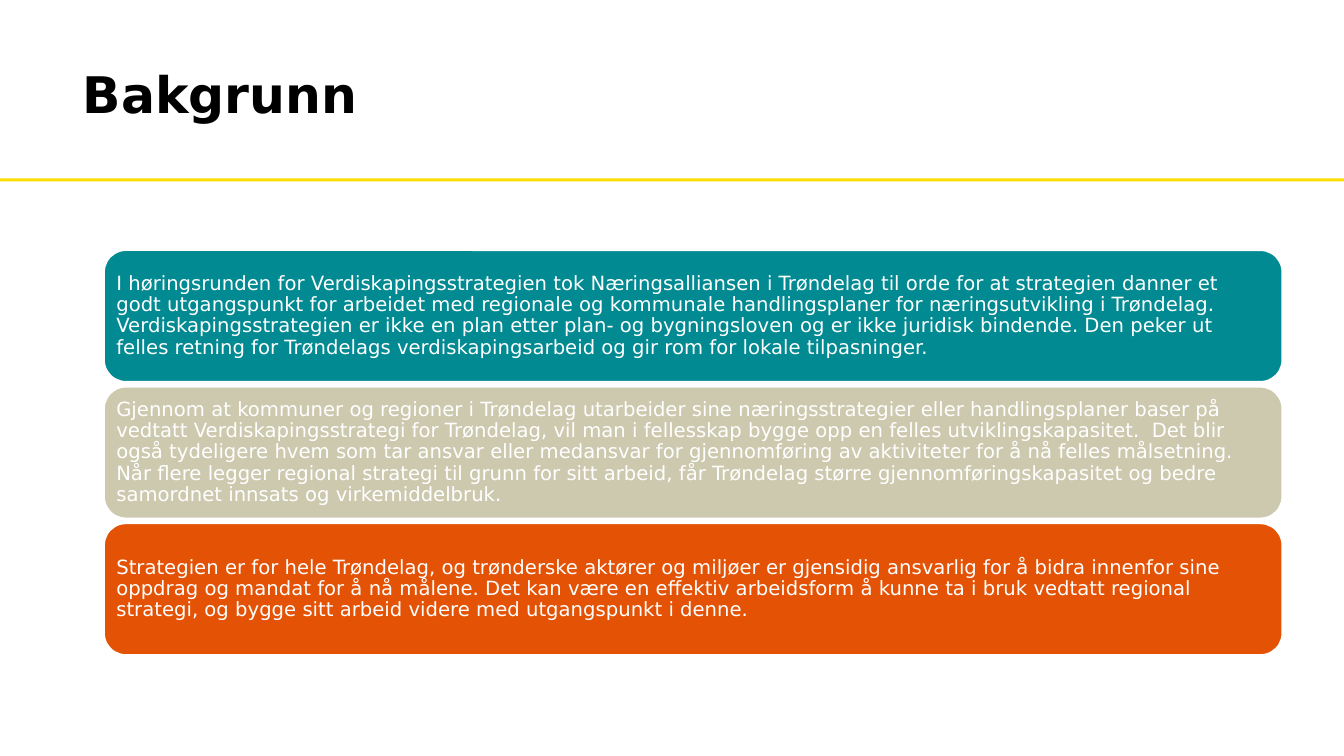
import pptx
import pptx.util
import pptx.dml.color
import pptx.enum.shapes
import pptx.enum.text

Inches = pptx.util.Inches
Pt = pptx.util.Pt
RGBColor = pptx.dml.color.RGBColor
SHAPES = pptx.enum.shapes.MSO_SHAPE

BLACK = RGBColor(0x00, 0x00, 0x00)
WHITE = RGBColor(0xFF, 0xFF, 0xFF)
YELLOW = RGBColor(0xFF, 0xDD, 0x00)
TEAL = RGBColor(0x01, 0x8A, 0x92)
SAND = RGBColor(0xCD, 0xC9, 0xAF)
ORANGE = RGBColor(0xE3, 0x52, 0x05)

FONT = "DejaVu Sans"
PANEL_TOP = 2.48
PANEL_STEP = 1.355
PANELS = [
    (TEAL, "I høringsrunden for Verdiskapingsstrategien tok Næringsalliansen i Trøndelag til orde "
           "for at strategien danner et godt utgangspunkt for arbeidet med regionale og kommunale "
           "handlingsplaner for næringsutvikling i Trøndelag. Verdiskapingsstrategien er ikke en plan "
           "etter plan- og bygningsloven og er ikke juridisk bindende. Den peker ut felles retning for "
           "Trøndelags verdiskapingsarbeid og gir rom for lokale tilpasninger."),
    (SAND, "Gjennom at kommuner og regioner i Trøndelag utarbeider sine næringsstrategier eller "
           "handlingsplaner baser på vedtatt Verdiskapingsstrategi for Trøndelag, vil man i fellesskap "
           "bygge opp en felles utviklingskapasitet.  Det blir også tydeligere hvem som tar ansvar eller "
           "medansvar for gjennomføring av aktiviteter for å nå felles målsetning. Når flere legger "
           "regional strategi til grunn for sitt arbeid, får Trøndelag større gjennomføringskapasitet "
           "og bedre samordnet innsats og virkemiddelbruk."),
    (ORANGE, "Strategien er for hele Trøndelag, og trønderske aktører og miljøer er gjensidig ansvarlig "
             "for å bidra innenfor sine oppdrag og mandat for å nå målene. Det kan være en effektiv "
             "arbeidsform å kunne ta i bruk vedtatt regional strategi, og bygge sitt arbeid videre med "
             "utgangspunkt i denne."),
]


def write_text(shape, text, *, size, color, bold=False, inset=0):
    frame = shape.text_frame
    frame.word_wrap = True
    frame.auto_size = pptx.enum.text.MSO_AUTO_SIZE.NONE
    frame.vertical_anchor = pptx.enum.text.MSO_ANCHOR.MIDDLE
    frame.margin_left = frame.margin_right = Inches(inset)
    frame.margin_top = frame.margin_bottom = Inches(inset)
    para = frame.paragraphs[0]
    para.alignment = pptx.enum.text.PP_ALIGN.LEFT
    para.line_spacing = 0.9
    span = para.add_run()
    span.text = text
    span.font.name = FONT
    span.font.size = Pt(size)
    span.font.bold = bold
    span.font.color.rgb = color


def add_title(page, text):
    title = page.shapes.title
    title.left, title.top = Inches(0.82), Inches(0.36)
    title.width, title.height = Inches(10.5), Inches(1.21)
    write_text(title, text, size=36, color=BLACK, bold=True)


def add_filled_shape(page, kind, left, top, width, height, fill):
    shape = page.shapes.add_shape(kind, Inches(left), Inches(top), Inches(width), Inches(height))
    shape.shadow.inherit = False
    shape.fill.solid()
    shape.fill.fore_color.rgb = fill
    shape.line.fill.background()
    return shape


def add_panel(page, top, fill, text):
    panel = add_filled_shape(page, SHAPES.ROUNDED_RECTANGLE, 1.03, top, 11.69, 1.31, fill)
    panel.line.color.rgb = WHITE
    panel.line.width = Pt(1.5)
    write_text(panel, text, size=14, color=WHITE, inset=0.06)


def main():
    deck = pptx.Presentation()
    deck.slide_width, deck.slide_height = Inches(13.33), Inches(7.5)
    page = deck.slides.add_slide(deck.slide_layouts.get_by_name("Title Only"))
    add_filled_shape(page, SHAPES.RECTANGLE, 0, 1.77, 13.33, 0.03, YELLOW)
    add_title(page, "Bakgrunn")
    for index, (fill, text) in enumerate(PANELS):
        add_panel(page, PANEL_TOP + index * PANEL_STEP, fill, text)
    deck.save("out.pptx")


if __name__ == "__main__":
    main()
